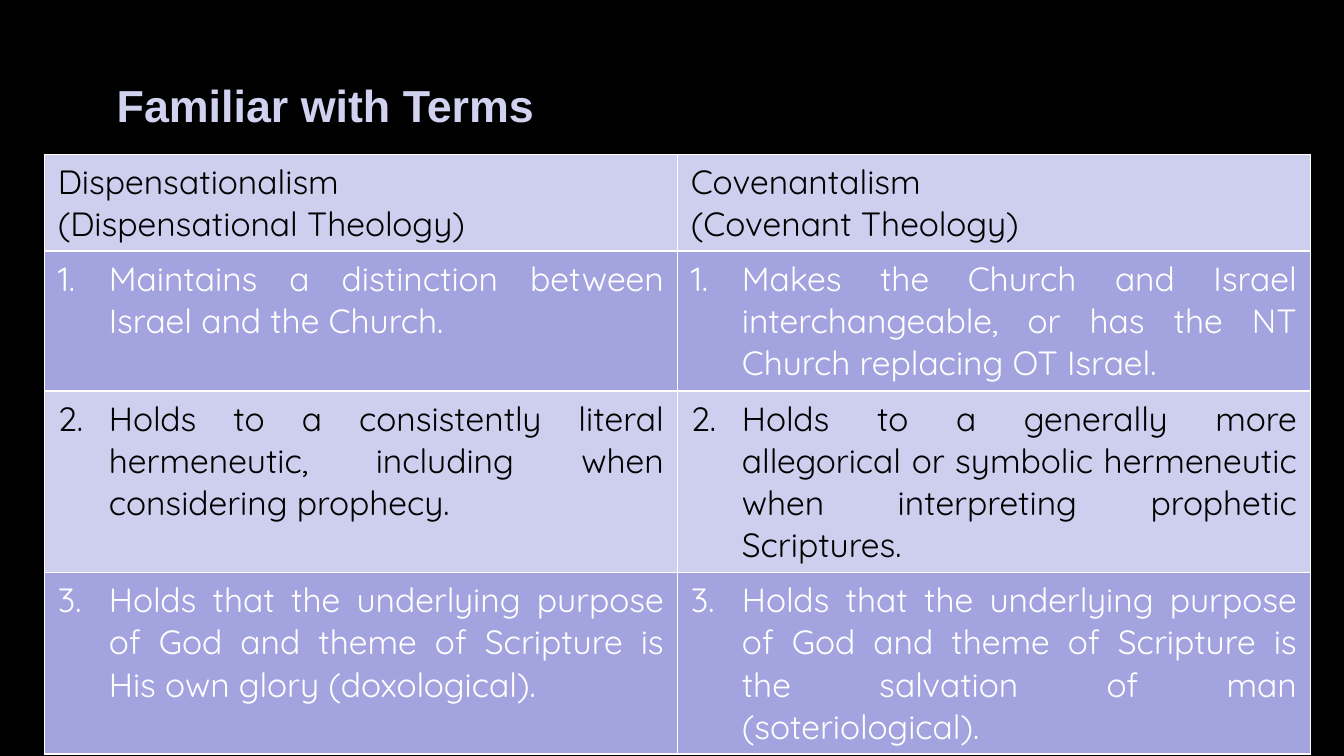
from pptx import Presentation
from pptx.dml.color import RGBColor
from pptx.enum.text import MSO_ANCHOR, PP_ALIGN
from pptx.oxml import parse_xml
from pptx.oxml.ns import nsdecls
from pptx.util import Inches, Pt

# Content
TITLE = "Familiar with Terms"
HEADS = [
    ("Dispensationalism", "(Dispensational Theology)"),
    ("Covenantalism", "(Covenant Theology)"),
]
POINTS = [
    ("Maintains a distinction between Israel and the Church.",
     "Makes the Church and Israel interchangeable, or has the NT Church replacing OT Israel."),
    ("Holds to a consistently literal hermeneutic, including when considering prophecy.",
     "Holds to a generally more allegorical or symbolic hermeneutic when interpreting prophetic Scriptures."),
    ("Holds that the underlying purpose of God and theme of Scripture is His own glory (doxological).",
     "Holds that the underlying purpose of God and theme of Scripture is the salvation of man (soteriological)."),
]
HEIGHTS = [0.72, 1.04, 1.35, 1.35]

# Colours and formats
BLACK = RGBColor(0x00, 0x00, 0x00)
WHITE = RGBColor(0xFF, 0xFF, 0xFF)
LILAC = RGBColor(0xD1, 0xD1, 0xF0)
LIGHT = RGBColor(0xCE, 0xCE, 0xEF)
DARK = RGBColor(0xA3, 0xA3, 0xE0)
BANDS = [(LIGHT, BLACK), (DARK, WHITE)]
HEAD = {"name": "Arial", "size": Pt(24), "bold": True}
BODY = {"name": "Quicksand", "size": Pt(18), "bold": False, "italic": False}
INDENT = Inches(0.38)


def write(para, text, form, color):
    run = para.add_run()
    run.text = text
    for key, value in form.items():
        setattr(run.font, key, value)
    run.font.color.rgb = color


def number(para, start):
    para.alignment = PP_ALIGN.JUSTIFY
    props = para._p.get_or_add_pPr()
    props.set("marL", str(INDENT))
    props.set("indent", str(-INDENT))
    props.append(parse_xml(
        f'<a:buAutoNum {nsdecls("a")} type="arabicPeriod" startAt="{start}"/>'))


def frame(cell, color):
    props = cell._tc.get_or_add_tcPr()
    for i, side in enumerate(("lnL", "lnR", "lnT", "lnB")):
        props.insert(i, parse_xml(
            f'<a:{side} {nsdecls("a")} w="{Pt(1)}"><a:solidFill>'
            f'<a:srgbClr val="{color}"/></a:solidFill></a:{side}>'))


# Slide, 16 by 9
deck = Presentation()
deck.slide_width = Inches(10)
deck.slide_height = deck.slide_width * 9 // 16
slide = deck.slides.add_slide(deck.slide_layouts[6])
slide.background.fill.solid()
slide.background.fill.fore_color.rgb = BLACK

# Title
box = slide.shapes.add_textbox(Inches(0.77), Inches(0.31), Inches(8.54), Inches(0.98))
text = box.text_frame
text.word_wrap = True
text.vertical_anchor = MSO_ANCHOR.MIDDLE
para = text.paragraphs[0]
para.line_spacing = 0.9
para.space_after = Pt(6)
write(para, TITLE, HEAD, LILAC)

# Table
rows = [HEADS] + POINTS
table = slide.shapes.add_table(len(rows), len(HEADS), Inches(0.33), Inches(1.15),
                               Inches(9.42), Inches(sum(HEIGHTS))).table
for r, (row, height) in enumerate(zip(rows, HEIGHTS)):
    table.rows[r].height = Inches(height)
    fill, ink = BANDS[r % 2]
    for c, item in enumerate(row):
        cell = table.cell(r, c)
        cell.fill.solid()
        cell.fill.fore_color.rgb = fill
        frame(cell, WHITE)
        para = cell.text_frame.paragraphs[0]
        if r == 0:
            name, note = item
            write(para, name, BODY, ink)
            write(cell.text_frame.add_paragraph(), note, BODY, ink)
        else:
            number(para, r)
            write(para, item, BODY, ink)

deck.save("out.pptx")
